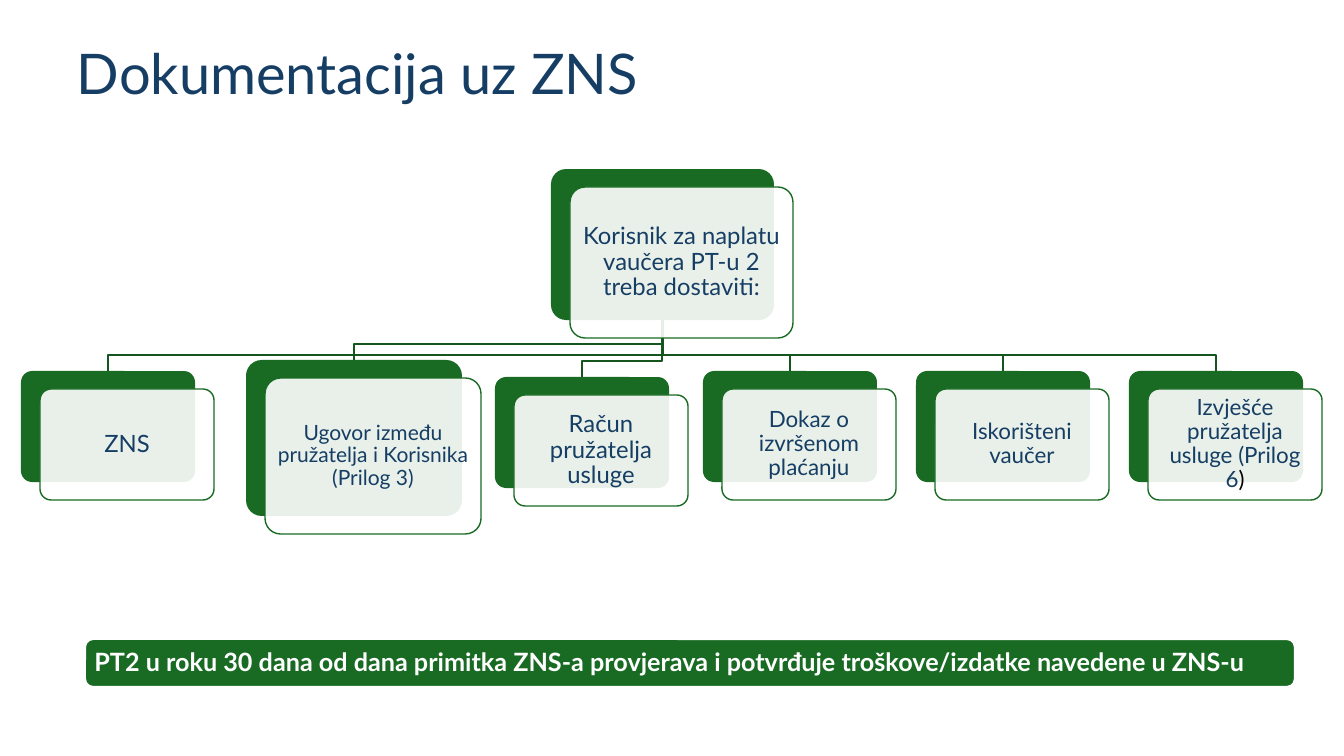
from collections import namedtuple

from lxml.etree import SubElement
from pptx import Presentation
from pptx.dml.color import RGBColor
from pptx.enum.shapes import MSO_SHAPE
from pptx.enum.text import MSO_ANCHOR, PP_ALIGN
from pptx.oxml.ns import qn
from pptx.util import Pt

GREEN = RGBColor(0x19, 0x6B, 0x24)
DARK_GREEN = RGBColor(0x14, 0x56, 0x1D)
NAVY = RGBColor(0x16, 0x3E, 0x64)
WHITE = RGBColor(0xFF, 0xFF, 0xFF)
BLACK = RGBColor(0x00, 0x00, 0x00)

EMU_PER_PX = 914400 / 100.8
FONT = "Lato"
CARD_OFFSET_X, CARD_OFFSET_Y = 19, 18
BEND_HEIGHT = 16
CARD_TOP, CARD_WIDTH, CARD_HEIGHT = 371, 174, 111

Box = namedtuple("Box", "left top width height")
ROOT_BOX = Box(551, 169, 223, 151)
ROOT_TEXT = "Korisnik za naplatu vaučera PT-u 2 treba dostaviti:"
DOCUMENTS = [
    (Box(21, CARD_TOP, CARD_WIDTH, CARD_HEIGHT), [("ZNS", NAVY)], 17),
    (Box(246, 360, 216, 156),
     [("Ugovor između pružatelja i Korisnika (Prilog 3)", NAVY)], 15),
    (Box(495, 377, CARD_WIDTH, CARD_HEIGHT),
     [("Račun pružatelja usluge", NAVY)], 17),
    (Box(703, CARD_TOP, CARD_WIDTH, CARD_HEIGHT),
     [("Dokaz o izvršenom plaćanju", NAVY)], 16),
    (Box(916, CARD_TOP, CARD_WIDTH, CARD_HEIGHT),
     [("Iskorišteni vaučer", NAVY)], 16),
    (Box(1129, CARD_TOP, CARD_WIDTH, CARD_HEIGHT),
     [("Izvješće pružatelja usluge (Prilog 6", NAVY), (")", BLACK)], 16),
]


def px(length):
    """Turn a length in px into EMU."""
    return round(length * EMU_PER_PX)


def write_text(shape, runs, size, bold=False, align=PP_ALIGN.LEFT,
               anchor=MSO_ANCHOR.MIDDLE, margins=(7, 7), spacing=0.9):
    """Fill a shape with one paragraph of coloured runs."""
    frame = shape.text_frame
    frame.word_wrap = True
    frame.vertical_anchor = anchor
    frame.margin_left = frame.margin_right = px(margins[0])
    frame.margin_top = frame.margin_bottom = px(margins[1])
    paragraph = frame.paragraphs[0]
    paragraph.alignment = align
    paragraph.line_spacing = spacing
    for text, color in runs:
        run = paragraph.add_run()
        run.text = text
        run.font.name = FONT
        run.font.size = Pt(size)
        run.font.bold = bold
        run.font.color.rgb = color


def add_rounded(slide, box, fill, line=None, line_width=1, corner=0.1):
    """Add a rounded rectangle without shadow."""
    shape = slide.shapes.add_shape(MSO_SHAPE.ROUNDED_RECTANGLE, *map(px, box))
    shape.shadow.inherit = False
    shape.adjustments[0] = corner
    shape.fill.solid()
    shape.fill.fore_color.rgb = fill
    if line is None:
        shape.line.fill.background()
    else:
        shape.line.color.rgb = line
        shape.line.width = Pt(line_width)
    return shape


def add_card(slide, box, runs, size):
    """Add a green plate with a translucent text card shifted over it."""
    add_rounded(slide, box, GREEN)
    front_box = box._replace(left=box.left + CARD_OFFSET_X,
                             top=box.top + CARD_OFFSET_Y)
    front = add_rounded(slide, front_box, WHITE, line=GREEN)
    color = front.fill._xPr.find(qn("a:solidFill"))[0]
    SubElement(color, qn("a:alpha"), val="90000")
    margin = 6 if size < 16 else 7
    write_text(front, runs, size, align=PP_ALIGN.CENTER,
               margins=(margin, margin))


def add_branch(slide, parent, child):
    """Draw the bent line from the parent's foot to the child's top."""
    start_x = parent.left + parent.width / 2
    start_y = parent.top + parent.height
    end_x = child.left + child.width / 2
    bend_y = child.top - BEND_HEIGHT
    builder = slide.shapes.build_freeform(px(start_x), px(start_y))
    corners = [(start_x, bend_y), (end_x, bend_y), (end_x, child.top)]
    builder.add_line_segments([(px(x), px(y)) for x, y in corners], close=False)
    branch = builder.convert_to_shape()
    branch.shadow.inherit = False
    branch.fill.background()
    branch.line.color.rgb = DARK_GREEN
    branch.line.width = Pt(1.5)


def add_title(slide, box):
    """Add the slide title."""
    title = slide.shapes.add_textbox(*map(px, box))
    write_text(title, [("Dokumentacija uz ZNS", NAVY)], 40,
               anchor=MSO_ANCHOR.TOP, margins=(10, 5), spacing=1.0)


def add_hierarchy(slide, root_box):
    """Add the root card, its documents and the lines between them."""
    for box, _, _ in reversed(DOCUMENTS):
        add_branch(slide, root_box, box)
    add_card(slide, root_box, [(ROOT_TEXT, NAVY)], 17)
    for box, runs, size in DOCUMENTS:
        add_card(slide, box, runs, size)


def add_banner(slide, box):
    """Add the deadline banner at the foot of the slide."""
    banner = add_rounded(slide, box, GREEN, line=WHITE, line_width=1.5,
                         corner=0.17)
    text = ("PT2 u roku 30 dana od dana primitka ZNS-a provjerava i "
            "potvrđuje troškove/izdatke navedene u ZNS-u")
    write_text(banner, [(text, WHITE)], 18, bold=True)


def main():
    """Build the slide and save it."""
    presentation = Presentation()
    presentation.slide_width = px(1344)
    presentation.slide_height = px(756)
    slide = presentation.slides.add_slide(presentation.slide_layouts[6])
    add_hierarchy(slide, ROOT_BOX)
    add_title(slide, Box(67, 33, 830, 78))
    add_banner(slide, Box(85, 639, 1210, 48))
    presentation.save("out.pptx")


if __name__ == "__main__":
    main()
